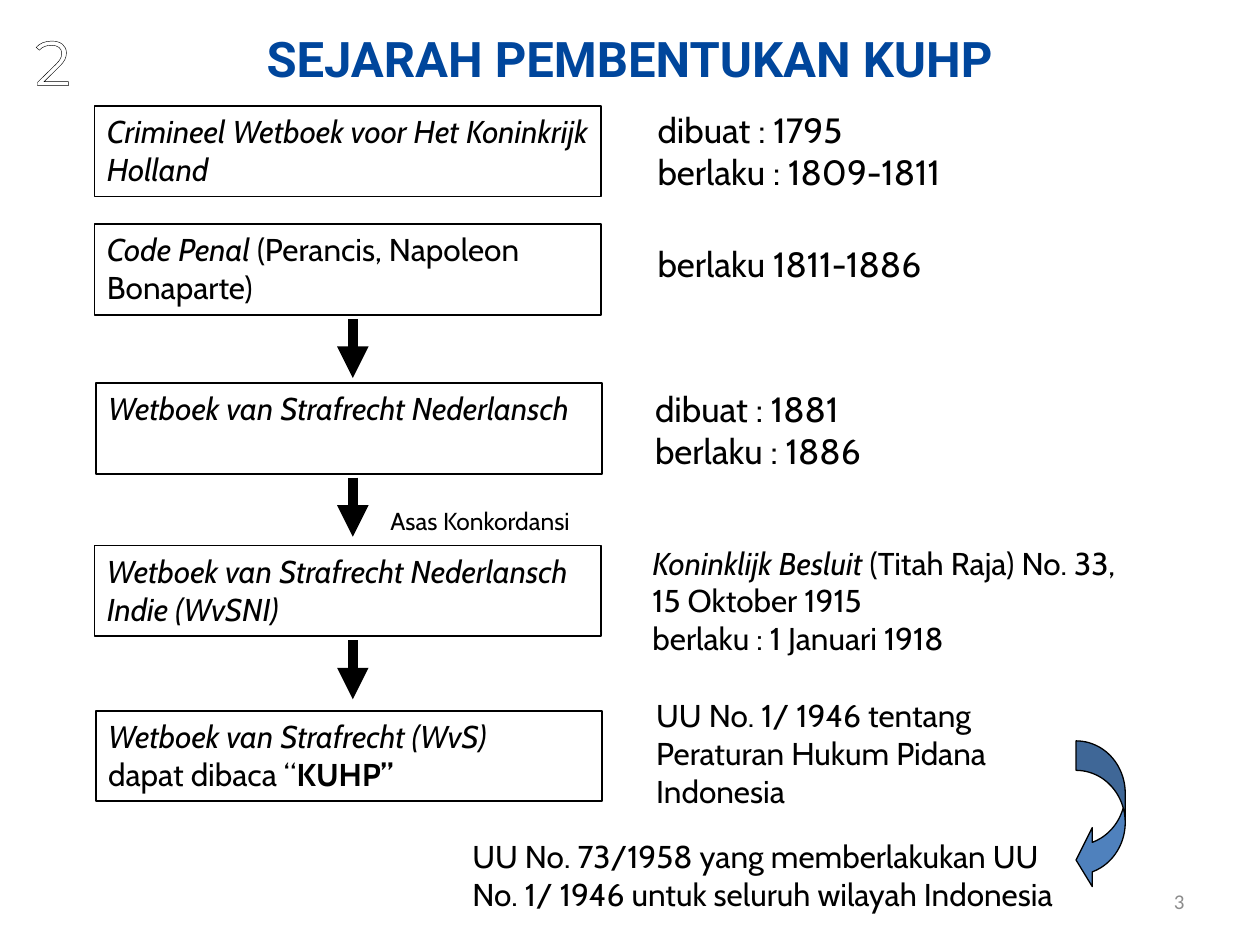
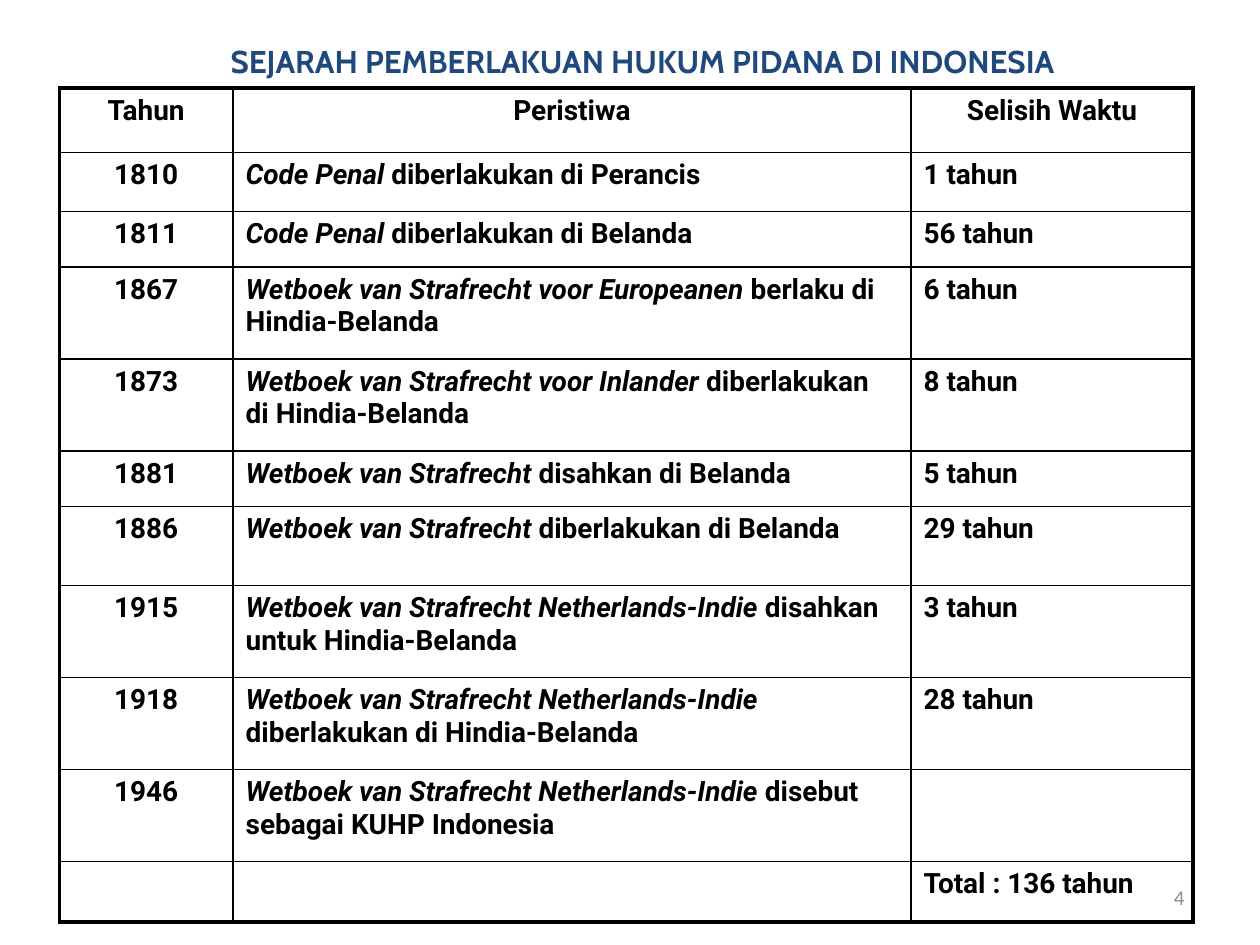
import pptx
import pptx.util
import pptx.dml.color
import pptx.enum.shapes
import pptx.enum.text
import pptx.oxml
import pptx.oxml.ns
from dataclasses import dataclass

Inches = pptx.util.Inches
Pt = pptx.util.Pt
Align = pptx.enum.text.PP_ALIGN
Anchor = pptx.enum.text.MSO_ANCHOR
Shape = pptx.enum.shapes.MSO_SHAPE
Link = pptx.enum.shapes.MSO_CONNECTOR


@dataclass
class Theme:
    ink: str = "000000"
    white: str = "FFFFFF"
    blue: str = "00469C"
    navy: str = "1F497D"
    steel: str = "4F81BD"
    grey: str = "8C8C8C"
    body: str = "Cabin"
    head: str = "Roboto"
    page: str = "Calibri"
    mark: str = "Montserrat"
    title: int = 28
    date: int = 20
    text: int = 18
    cell: int = 16
    note: int = 14
    foot: int = 12
    big: int = 36


look = Theme()
rgb = pptx.dml.color.RGBColor.from_string


def write(frame, lines, size, font=look.body, color=look.ink, bold=False,
          align=Align.LEFT, anchor=Anchor.TOP, wrap=True):
    frame.word_wrap = wrap
    frame.vertical_anchor = anchor
    frame.auto_size = pptx.enum.text.MSO_AUTO_SIZE.NONE
    frame.text = "\n".join("" if isinstance(line, tuple) else line for line in lines)
    for para, line in zip(frame.paragraphs, lines):
        para.alignment = align
        parts = zip(line, "ipb") if isinstance(line, tuple) else []
        for text, style in parts:
            if text:
                run = para.add_run()
                run.text = text
                run.font.italic = style == "i"
                run.font.bold = style == "b" or bold
        for run in para.runs:
            run.font.size = Pt(size)
            run.font.name = font
            run.font.color.rgb = rgb(color)
            if bold:
                run.font.bold = True


def edge(tag, width):
    return pptx.oxml.parse_xml(
        f'<a:{tag} {pptx.oxml.ns.nsdecls("a")} w="{Pt(width)}"><a:solidFill>'
        f'<a:srgbClr val="{look.ink}"/></a:solidFill></a:{tag}>')


deck = pptx.Presentation()
deck.slide_width = Inches(10)
deck.slide_height = Inches(7.5)

titles = [
    ("SEJARAH PEMBENTUKAN KUHP", (0.98, 0.05, 8.03, 0.82),
     dict(size=look.title, font=look.head, color=look.blue, align=Align.CENTER, anchor=Anchor.MIDDLE)),
    ("SEJARAH PEMBERLAKUAN HUKUM PIDANA DI INDONESIA", (1.73, 0.28, 6.85, 0.4),
     dict(size=look.text, color=look.navy, wrap=False)),
]
pages = [("3", (8.67, 6.95, 0.83, 0.4)), ("4", (7.17, 6.87, 2.33, 0.5))]

for (text, place, form), (page, spot) in zip(titles, pages):
    slide = deck.slides.add_slide(deck.slide_layouts[5])
    title = slide.shapes.title
    title.left, title.top, title.width, title.height = map(Inches, place)
    write(title.text_frame, [text], bold=True, **form)
    foot = slide.shapes.add_textbox(*map(Inches, spot))
    write(foot.text_frame, [page], look.foot, look.page, look.grey,
          align=Align.RIGHT, anchor=Anchor.MIDDLE)

flow, dates = deck.slides

steps = [
    (0.75, 0.84, [("Crimineel Wetboek voor Het Koninkrijk Holland",)]),
    (0.75, 1.78, [("Code Penal ", "(Perancis, Napoleon Bonaparte)")]),
    (0.76, 3.04, [("Wetboek van Strafrecht Nederlansch",)]),
    (0.75, 4.33, [("Wetboek van Strafrecht Nederlansch Indie (WvSNI)",)]),
    (0.76, 5.64, [("Wetboek van Strafrecht (WvS)",), ("", "dapat dibaca “", "KUHP”")]),
]
for left, top, lines in steps:
    box = flow.shapes.add_shape(Shape.RECTANGLE, Inches(left), Inches(top), Inches(4.02), Inches(0.72))
    box.shadow.inherit = False
    box.fill.background()
    box.line.color.rgb = rgb(look.ink)
    box.line.width = Pt(1)
    write(box.text_frame, lines, look.text)

for left, top, lines in steps[1:-1]:
    start = top + 0.75
    arrow = flow.shapes.add_connector(
        Link.STRAIGHT, Inches(2.8), Inches(start), Inches(2.8), Inches(start + 0.47))
    arrow.line.color.rgb = rgb(look.ink)
    arrow.line.width = Pt(6)
    space = pptx.oxml.ns.nsdecls("a")
    arrow.line._get_or_add_ln().append(pptx.oxml.parse_xml(f'<a:tailEnd {space} type="triangle"/>'))
    arrow._element.spPr.append(pptx.oxml.parse_xml(f"<a:effectLst {space}/>"))

notes = [
    ((5.12, 0.81, 3.31, 0.77), look.date, ["dibuat : 1795", "berlaku : 1809-1811"]),
    ((5.12, 1.87, 3.31, 0.44), look.date, ["berlaku 1811-1886"]),
    ((5.1, 3.02, 3.31, 0.77), look.date, ["dibuat : 1881", "berlaku : 1886"]),
    ((3, 3.97, 1.77, 0.33), look.note, ["Asas Konkordansi"]),
    ((5.08, 4.26, 4.49, 1.01), look.text,
     [("Koninklijk Besluit ", "(Titah Raja) No. 33,"), "15 Oktober 1915", "berlaku : 1 Januari 1918"]),
    ((5.11, 5.47, 3.7, 1.01), look.text, ["UU No. 1/ 1946 tentang Peraturan Hukum Pidana Indonesia"]),
    ((3.65, 6.59, 4.89, 0.71), look.text,
     ["UU No. 73/1958 yang memberlakukan UU No. 1/ 1946 untuk seluruh wilayah Indonesia"]),
]
for place, size, lines in notes:
    note = flow.shapes.add_textbox(*map(Inches, place))
    write(note.text_frame, lines, size, anchor=Anchor.MIDDLE, wrap=size != look.note)

curve = flow.shapes.add_shape(
    Shape.CURVED_LEFT_ARROW, Inches(8.54), Inches(5.88), Inches(0.39), Inches(1.18))
curve.shadow.inherit = False
for index, value in enumerate((0.6, 1.2, 0.33)):
    curve.adjustments[index] = value
curve.fill.solid()
curve.fill.fore_color.rgb = rgb(look.steel)
curve.line.color.rgb = rgb(look.ink)
curve.line.width = Pt(0.75)

mark = flow.shapes.add_textbox(Inches(0.18), Inches(0.13), Inches(0.33), Inches(0.71))
write(mark.text_frame, ["2"], look.big, look.mark, look.white, wrap=False)
mark.text_frame.paragraphs[0].runs[0].font._element.insert(0, edge("ln", 0.75))

wet = "Wetboek van Strafrecht "
indie = wet + "Netherlands-Indie "
rows = [
    (0.51, "Tahun", "Peristiwa", "Selisih Waktu"),
    (0.47, "1810", ("Code Penal ", "diberlakukan di Perancis"), "1 tahun"),
    (0.44, "1811", ("Code Penal ", "diberlakukan di Belanda"), "56 tahun"),
    (0.73, "1867", (wet + "voor Europeanen ", "berlaku di Hindia-Belanda"), "6 tahun"),
    (0.73, "1873", (wet + "voor Inlander ", "diberlakukan di Hindia-Belanda"), "8 tahun"),
    (0.44, "1881", (wet, "disahkan di Belanda"), "5 tahun"),
    (0.63, "1886", (wet, "diberlakukan di Belanda"), "29 tahun"),
    (0.73, "1915", (indie, "disahkan untuk Hindia-Belanda"), "3 tahun"),
    (0.73, "1918", (indie, "diberlakukan di Hindia-Belanda"), "28 tahun"),
    (0.73, "1946", (indie, "disebut sebagai KUHP Indonesia"), ""),
    (0.48, "", "", "Total : 136 tahun"),
]
widths = (1.38, 5.38, 2.24)
last = len(rows) - 1
table = dates.shapes.add_table(
    len(rows), 3, Inches(0.47), Inches(0.7), Inches(9), Inches(6.61)).table
table.first_row = False
table.horz_banding = False
for col, width in zip(table.columns, widths):
    col.width = Inches(width)
for r, (height, *texts) in enumerate(rows):
    table.rows[r].height = Inches(height)
    for c, text in enumerate(texts):
        cell = table.cell(r, c)
        cell.fill.background()
        mid = r == 0 or c == 0
        write(cell.text_frame, [text], look.cell, look.head, bold=True,
              align=Align.CENTER if mid else Align.LEFT)
        outer = {"lnL": c == 0, "lnR": c == 2, "lnT": r == 0, "lnB": r == last}
        props = cell._tc.get_or_add_tcPr()
        for index, (tag, thick) in enumerate(outer.items()):
            props.insert(index, edge(tag, 2.25 if thick else 1))

deck.save("out.pptx")
